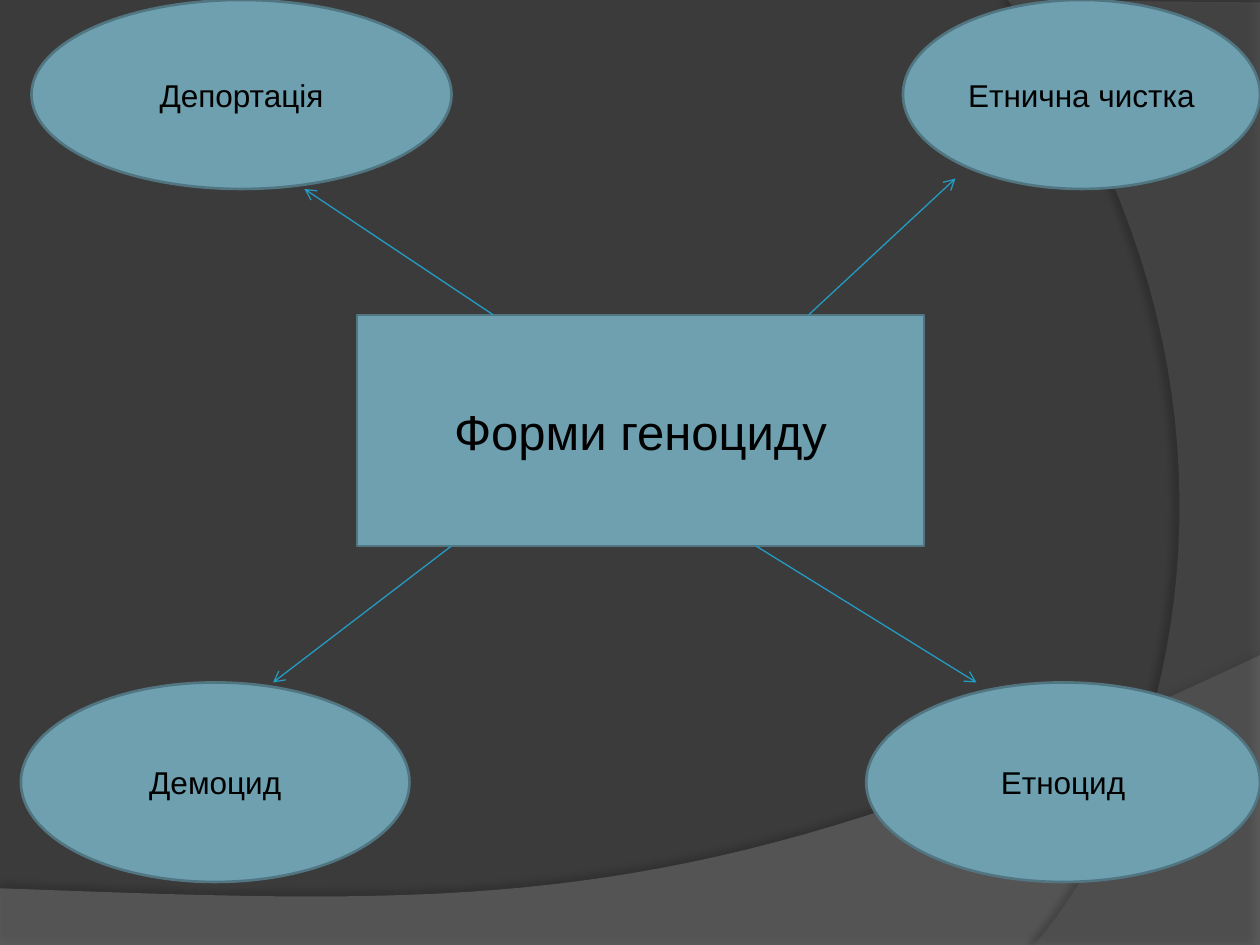
from lxml.etree import SubElement
from pptx import Presentation
from pptx.dml.color import RGBColor
from pptx.enum.shapes import MSO_CONNECTOR, MSO_SHAPE
from pptx.enum.text import MSO_ANCHOR, PP_ALIGN
from pptx.oxml.ns import qn
from pptx.util import Inches, Pt

COLUMNS, ROWS = 120, 90


def color(value):
    return RGBColor.from_string(value)


def curve(start, first, second, end, steps=40):
    points = []
    for step in range(steps + 1):
        t = step / steps
        weights = ((1 - t) ** 3, 3 * t * (1 - t) ** 2, 3 * t ** 2 * (1 - t), t ** 3)
        points.append(tuple(
            sum(weight * value for weight, value in zip(weights, values))
            for values in zip(start, first, second, end)
        ))
    return points


class DiagramSlide:
    """Draws styled elements on one slide, measured in grid columns and rows."""

    font = "Arial"
    node_fill, node_line, text_color = "6EA0B0", "517682", "000000"
    arrow_color = "239BC2"

    def __init__(self, presentation, background):
        self.slide = presentation.slides.add_slide(presentation.slide_layouts[6])
        self.cell_width = presentation.slide_width / COLUMNS
        self.cell_height = presentation.slide_height / ROWS
        fill = self.slide.background.fill
        fill.solid()
        fill.fore_color.rgb = color(background)

    def place(self, column, row):
        return round(column * self.cell_width), round(row * self.cell_height)

    def wave(self, points, fill, opacity, shadow_opacity, distance, direction):
        start, *others = [self.place(*point) for point in points]
        builder = self.slide.shapes.build_freeform(*start)
        builder.add_line_segments(others, close=True)
        shape = builder.convert_to_shape()
        shape.fill.solid()
        shape.fill.fore_color.rgb = color(fill)
        shape.line.fill.background()
        properties = shape._element.spPr
        fill_color = properties.find(qn("a:solidFill"))[0]
        SubElement(fill_color, qn("a:alpha"), val=str(opacity * 1000))
        effects = SubElement(properties, qn("a:effectLst"))
        shadow = SubElement(
            effects, qn("a:outerShdw"), blurRad=str(Pt(4)), dist=str(Pt(distance)),
            dir=str(direction * 60000), algn="ctr", rotWithShape="0",
        )
        shadow_color = SubElement(shadow, qn("a:srgbClr"), val="000000")
        SubElement(shadow_color, qn("a:alpha"), val=str(shadow_opacity * 1000))

    def node(self, kind, text, box, size):
        column, row, width, height = box
        shape = self.slide.shapes.add_shape(
            kind, *self.place(column, row), *self.place(width, height))
        shape.shadow.inherit = False
        shape.fill.solid()
        shape.fill.fore_color.rgb = color(self.node_fill)
        shape.line.color.rgb = color(self.node_line)
        shape.line.width = Pt(1.5)
        frame = shape.text_frame
        frame.word_wrap = True
        frame.vertical_anchor = MSO_ANCHOR.MIDDLE
        paragraph = frame.paragraphs[0]
        paragraph.text = text
        paragraph.alignment = PP_ALIGN.CENTER
        paragraph.font.name = self.font
        paragraph.font.size = Pt(size)
        paragraph.font.color.rgb = color(self.text_color)

    def arrow(self, start, end):
        connector = self.slide.shapes.add_connector(
            MSO_CONNECTOR.STRAIGHT, *self.place(*start), *self.place(*end))
        connector.line.color.rgb = color(self.arrow_color)
        connector.line.width = Pt(0.75)
        properties = connector._element.spPr
        SubElement(properties.find(qn("a:ln")), qn("a:tailEnd"), type="arrow")
        SubElement(properties, qn("a:effectLst"))


def main():
    presentation = Presentation()
    presentation.slide_width = Inches(10)
    presentation.slide_height = Inches(7.5)
    diagram = DiagramSlide(presentation, "3B3B3B")

    bottom_edge = curve((120, 62.4), (67.1, 87.5), (46.9, 86.3), (0, 84.6))
    diagram.wave([(0, 90.1), (120, 90.1), *bottom_edge], "7F7F7F", 45, 35, 3.5, 270)
    right_edge = curve((98.5, 90), (112.2, 74.3), (122.2, 36), (96, 0))
    diagram.wave([(120, 0.24), (120, 90), *right_edge], "5E5E5E", 40, 45, 4, 180)

    diagram.node(MSO_SHAPE.RECTANGLE, "Форми геноциду", (34, 30, 54, 22), 28)
    forms = [
        ("Депортація", (3, 0, 40, 18), (47, 30), (29, 18)),
        ("Етнична чистка", (86, 0, 34, 18), (77, 30), (91, 17)),
        ("Етноцид", (82.5, 65, 37.5, 19), (72, 52), (93, 65)),
        ("Демоцид", (2, 65, 37, 19), (43, 52), (26, 65)),
    ]
    for text, box, start, end in forms:
        diagram.arrow(start, end)
        diagram.node(MSO_SHAPE.OVAL, text, box, 18)

    presentation.save("out.pptx")


if __name__ == "__main__":
    main()
